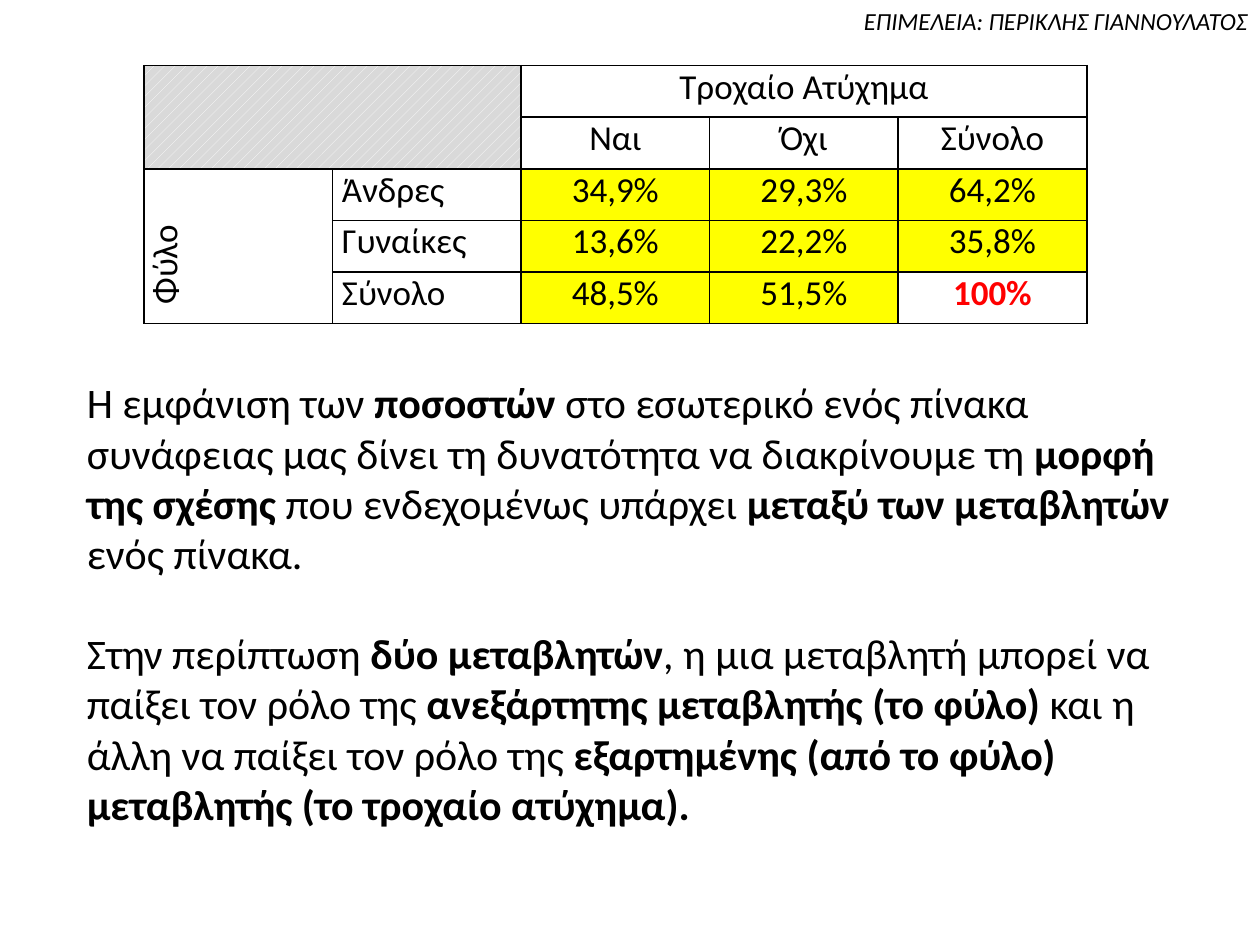
from lxml import etree
from pptx import Presentation
from pptx.dml.color import RGBColor
from pptx.enum.dml import MSO_PATTERN
from pptx.enum.text import PP_ALIGN
from pptx.oxml.ns import qn
from pptx.util import Pt

LEFT, CENTER, RIGHT = PP_ALIGN.LEFT, PP_ALIGN.CENTER, PP_ALIGN.RIGHT
HATCH = MSO_PATTERN.PERCENT_20

THEME = {
    "font": "Calibri",
    "ink": RGBColor(0, 0, 0),
    "paper": RGBColor(255, 255, 255),
    "total": RGBColor(255, 0, 0),
    "highlight": RGBColor(255, 255, 0),
    "corner": RGBColor(217, 217, 217),
    "credit_size": Pt(14),
    "table_size": Pt(20),
    "body_size": Pt(24),
}


def write_runs(paragraph, parts, size, align=LEFT, italic=False):
    """Write parts as runs that alternate between regular and bold."""
    paragraph.alignment = align
    for index, part in enumerate(parts):
        run = paragraph.add_run()
        run.text = part
        run.font.name = THEME["font"]
        run.font.size = size
        run.font.bold = index % 2 == 1
        run.font.italic = italic
        run.font.color.rgb = THEME["ink"]


def draw_borders(cell):
    """Give a cell a thin black line on all four sides."""
    properties = cell._tc.get_or_add_tcPr()
    for side in ("a:lnL", "a:lnR", "a:lnT", "a:lnB"):
        line = etree.SubElement(properties, qn(side), w=str(Pt(1)))
        solid = etree.SubElement(line, qn("a:solidFill"))
        etree.SubElement(solid, qn("a:srgbClr"), val=str(THEME["ink"]))


deck = Presentation()
deck.slide_width, deck.slide_height = Pt(720), Pt(540)
slide = deck.slides.add_slide(deck.slide_layouts[6])

# Credit line and explanatory paragraphs: left, top, width, height
passages = [
    ((306, 0, 414, 24.5), THEME["credit_size"], RIGHT, True,
     ["ΕΠΙΜΕΛΕΙΑ: ΠΕΡΙΚΛΗΣ ΓΙΑΝΝΟΥΛΑΤΟΣ"]),
    ((42.5, 211.7, 646.6, 123.8), THEME["body_size"], LEFT, False,
     ["Η εμφάνιση των ", "ποσοστών",
      " στο εσωτερικό ενός πίνακα συνάφειας μας δίνει τη δυνατότητα"
      " να διακρίνουμε τη ", "μορφή της σχέσης",
      " που ενδεχομένως υπάρχει ", "μεταξύ των μεταβλητών ",
      "ενός πίνακα."]),
    ((42.5, 355, 635, 123.8), THEME["body_size"], LEFT, False,
     ["Στην περίπτωση ", "δύο μεταβλητών",
      ", η μια μεταβλητή μπορεί να παίξει τον ρόλο της ",
      "ανεξάρτητης μεταβλητής (το φύλο) ",
      "και η άλλη να παίξει τον ρόλο της ",
      "εξαρτημένης (από το φύλο) μεταβλητής (το τροχαίο ατύχημα)."]),
]
for bounds, size, align, italic, parts in passages:
    passage = slide.shapes.add_textbox(*map(Pt, bounds)).text_frame
    passage.word_wrap = True
    write_runs(passage.paragraphs[0], parts, size, align, italic)

# Contingency table of sex against road accident
rows = [
    ["", "", "Τροχαίο Ατύχημα", "", ""],
    ["", "", "Ναι", "Όχι", "Σύνολο"],
    ["Φύλο", "Άνδρες", "34,9%", "29,3%", "64,2%"],
    ["", "Γυναίκες", "13,6%", "22,2%", "35,8%"],
    ["", "Σύνολο", "48,5%", "51,5%", "100%"],
]
COLUMN_WIDTH, ROW_HEIGHT = 107.75, 29.5
crosstab = slide.shapes.add_table(
    5, 5, Pt(82.3), Pt(37.5), Pt(5 * COLUMN_WIDTH), Pt(5 * ROW_HEIGHT)).table
crosstab.first_row = crosstab.horz_banding = False
for column in crosstab.columns:
    column.width = Pt(COLUMN_WIDTH)
for row in crosstab.rows:
    row.height = Pt(ROW_HEIGHT)

for r, labels in enumerate(rows):
    for c, label in enumerate(labels):
        cell = crosstab.cell(r, c)
        cell.margin_left = cell.margin_right = Pt(5.4)
        cell.margin_top = cell.margin_bottom = 0
        draw_borders(cell)
        if r >= 2 and c >= 2 and (r, c) != (4, 4):
            cell.fill.solid()
            cell.fill.fore_color.rgb = THEME["highlight"]
        else:
            cell.fill.background()
        if label:
            write_runs(cell.text_frame.paragraphs[0], [label],
                       THEME["table_size"], CENTER if c >= 2 else LEFT)

# Merged headings
for first, last in [((0, 0), (1, 1)), ((0, 2), (0, 4)), ((2, 0), (4, 0))]:
    crosstab.cell(*first).merge(crosstab.cell(*last))

# Hatched corner
corner = crosstab.cell(0, 0).fill
corner.patterned()
corner.pattern = HATCH
corner.fore_color.rgb = THEME["paper"]
corner.back_color.rgb = THEME["corner"]

# Row heading reads upwards
sex = crosstab.cell(2, 0)
sex._tc.get_or_add_tcPr().set("vert", "vert270")
sex.text_frame.paragraphs[0]._p.get_or_add_pPr().set("marL", str(Pt(5.65)))

# Grand total
grand_total = crosstab.cell(4, 4).text_frame.paragraphs[0].runs[0].font
grand_total.bold = True
grand_total.color.rgb = THEME["total"]

deck.save("out.pptx")
